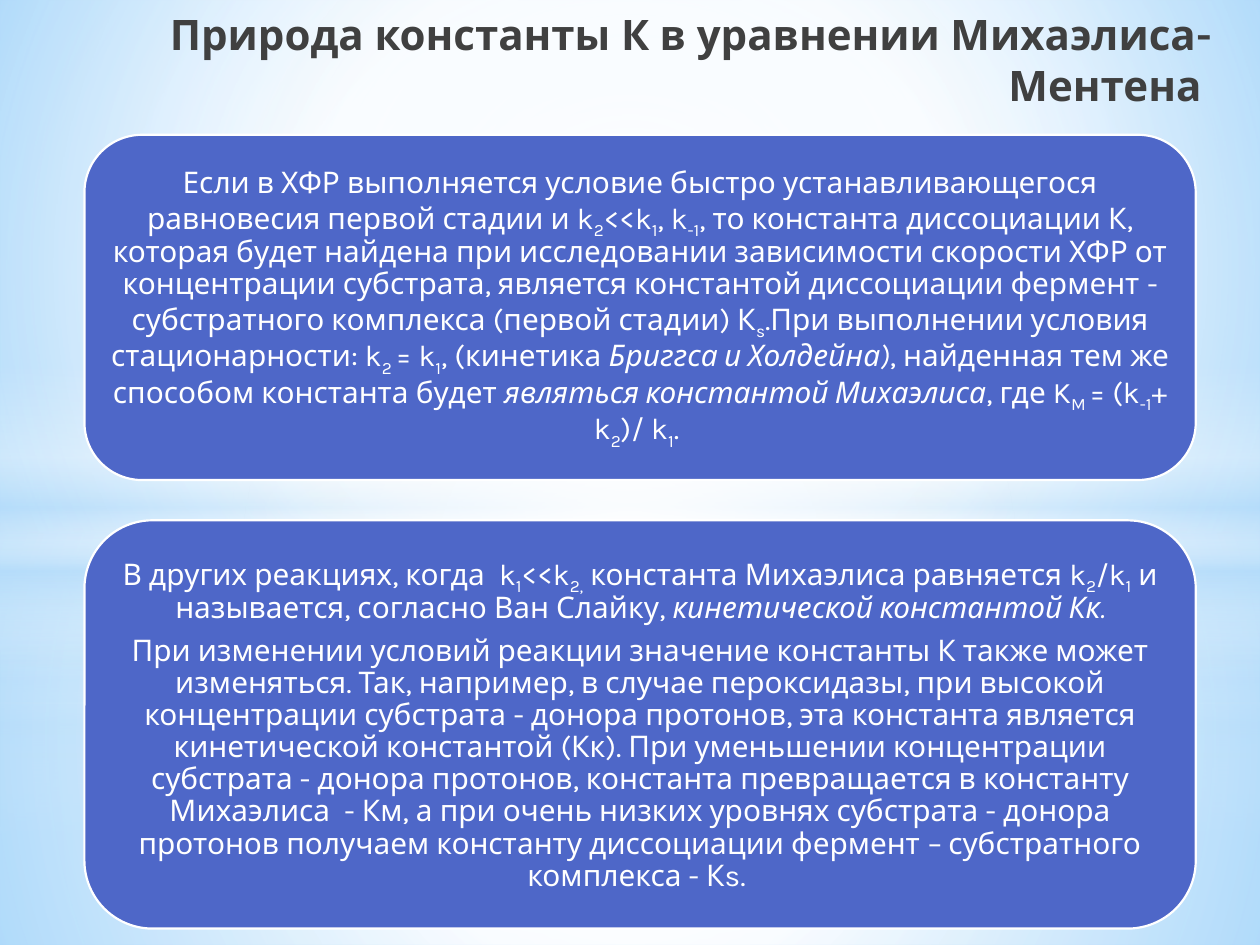
import pptx
import pptx.util
import pptx.dml.color
import pptx.enum.shapes
import pptx.enum.text
import pptx.oxml.ns
from lxml import etree

Inches = pptx.util.Inches
Pt = pptx.util.Pt
SHAPE = pptx.enum.shapes.MSO_SHAPE
ALIGN = pptx.enum.text.PP_ALIGN
ANCHOR = pptx.enum.text.MSO_ANCHOR
qn = pptx.oxml.ns.qn

FONT = "Karla"
COLORS = {
    "title": "404040",
    "panel": "4E67C8",
    "white": "FFFFFF",
    "mist": "B4DCFA",
    "sky": "9ED5FF",
    "deep_sky": "5BB9FF",
}
CENTER = (50, 50, 50, 50)

# In the texts ~ switches subscript and * switches italics
EQUILIBRIUM = [
    "Если в ХФР выполняется условие быстро устанавливающегося равновесия первой "
    "стадии и k~2~<<k~1~, k~-1~, то константа диссоциации К, которая будет найдена "
    "при исследовании зависимости скорости ХФР от концентрации субстрата, является "
    "константой диссоциации фермент - субстратного комплекса (первой стадии) "
    "К~s~.При выполнении условия стационарности: k~2 ~= k~1~, (кинетика *Бриггса и "
    "Холдейна)*, найденная тем же способом константа будет *являться константой "
    "Михаэлиса*, где K~M ~= (k~-1~+ k~2~)/ k~1~. ",
]
OTHER_REACTIONS = [
    "В других реакциях, когда  k~1~<<k~2,~ константа Михаэлиса равняется k~2~/k~1~ "
    "и называется, согласно Ван Слайку, *кинетической константой Кк.*",
    "При изменении условий реакции значение константы К также может изменяться. "
    "Так, например, в случае пероксидазы, при высокой концентрации субстрата - "
    "донора протонов, эта константа является кинетической константой (Кк). При "
    "уменьшении концентрации субстрата - донора протонов, константа превращается в "
    "константу Михаэлиса  - Км, а при очень низких уровнях субстрата - донора "
    "протонов получаем константу диссоциации фермент – субстратного комплекса - Кs. ",
]


def rgb(name):
    return pptx.dml.color.RGBColor.from_string(COLORS[name])


def paint_gradient(fill, element, stops, center=None):
    """Stops are (position, colour, opacity); no center means top to bottom."""
    fill.gradient()
    grad = next(element.iter(qn("a:gradFill")))
    for child in list(grad):
        grad.remove(child)
    stop_list = etree.SubElement(grad, qn("a:gsLst"))
    for pos, color, opacity in stops:
        gs = etree.SubElement(stop_list, qn("a:gs"), pos=str(pos * 1000))
        clr = etree.SubElement(gs, qn("a:srgbClr"), val=COLORS[color])
        etree.SubElement(clr, qn("a:alpha"), val=str(opacity * 1000))
    if center:
        radial = etree.SubElement(grad, qn("a:path"))
        radial.set("path", "circle")
        sides = {k: str(v * 1000) for k, v in zip("ltrb", center)}
        etree.SubElement(radial, qn("a:fillToRect"), **sides)
    else:
        etree.SubElement(grad, qn("a:lin"), ang="5400000", scaled="0")


def add_glow(s, kind, top, height, stops, center=None):
    sp = s.shapes.add_shape(kind, 0, Inches(top), Inches(10), Inches(height))
    sp.shadow.inherit = False
    sp.line.fill.background()
    paint_gradient(sp.fill, sp._element.spPr, stops, center)


def add_horizon(s, horizon, band_top, extra, glow_end):
    """Ground, sky, light band and round glow that meet at the horizon."""
    ground = [(0, "white", 91 + extra), (37, "white", 76 + extra), (100, "mist", 79 + extra)]
    sky = [(0, "white", 89 + extra), (48, "white", 62 + extra), (100, "mist", 79 + extra)]
    band = [(0, "white", 0), (29, "white", 30), (45, "mist", 40),
            (55, "white", 26), (65, "mist", 60), (100, "white", 0)]
    glow = [(0, "white", 100), (glow_end, "white", 0)]
    add_glow(s, SHAPE.RECTANGLE, horizon, 7.5 - horizon, ground, CENTER)
    add_glow(s, SHAPE.RECTANGLE, 0, horizon, sky, CENTER)
    add_glow(s, SHAPE.RECTANGLE, band_top, 2.5, band)
    add_glow(s, SHAPE.OVAL, 1.75, 5.58, glow, CENTER)


def format_run(r, size, color):
    r.font.name = FONT
    r.font.size = Pt(size)
    r.font.color.rgb = rgb(color)


def add_marked_runs(p, text):
    for i, level in enumerate(text.split("~")):
        for j, part in enumerate(level.split("*")):
            if not part:
                continue
            r = p.add_run()
            r.text = part
            format_run(r, 17, "white")
            r.font.italic = j % 2 == 1
            if i % 2:
                r.font._element.set("baseline", "-25000")


def add_panel(s, top, height, paragraphs):
    sp = s.shapes.add_shape(SHAPE.ROUNDED_RECTANGLE, Inches(0.67), Inches(top),
                            Inches(8.82), Inches(height))
    sp.shadow.inherit = False
    sp.fill.solid()
    sp.fill.fore_color.rgb = rgb("panel")
    sp.line.color.rgb = rgb("white")
    sp.line.width = Pt(1.25)
    tf = sp.text_frame
    tf.word_wrap = True
    tf.vertical_anchor = ANCHOR.MIDDLE
    tf.margin_left = tf.margin_right = tf.margin_top = tf.margin_bottom = Inches(0.07)
    for i, text in enumerate(paragraphs):
        p = tf.add_paragraph() if i else tf.paragraphs[0]
        p.alignment = ALIGN.CENTER
        p.line_spacing = 0.9
        p.space_after = Pt(6)
        add_marked_runs(p, text)


def set_title(s, text):
    title = s.shapes.title
    s.shapes._spTree.append(title._element)  # in front of the backdrop
    title.left, title.top = Inches(0.43), Inches(0.13)
    title.width, title.height = Inches(9.29), Inches(0.79)
    tf = title.text_frame
    tf.text = text
    tf.word_wrap = True
    tf.auto_size = pptx.enum.text.MSO_AUTO_SIZE.NONE
    tf.vertical_anchor = ANCHOR.BOTTOM
    p = tf.paragraphs[0]
    p.alignment = ALIGN.RIGHT
    format_run(p.runs[0], 24, "title")
    p.runs[0].font.bold = True


def main():
    prs = pptx.Presentation()
    prs.slide_width, prs.slide_height = Inches(10), Inches(7.5)
    s = prs.slides.add_slide(prs.slide_layouts[5])

    # Backdrop
    paint_gradient(s.background.fill, s._element,
                   [(0, "sky", 100), (60, "white", 100), (100, "deep_sky", 100)],
                   (20, 10, 20, 60))
    add_horizon(s, 5.58, 4.12, 0, 56)
    add_horizon(s, 4.23, 2.9, 1, 54)

    # Content
    set_title(s, "Природа константы К в уравнении Михаэлиса-Ментена ")
    add_panel(s, 1.07, 2.74, EQUILIBRIUM)
    add_panel(s, 4.13, 3.24, OTHER_REACTIONS)

    prs.save("out.pptx")


if __name__ == "__main__":
    main()
